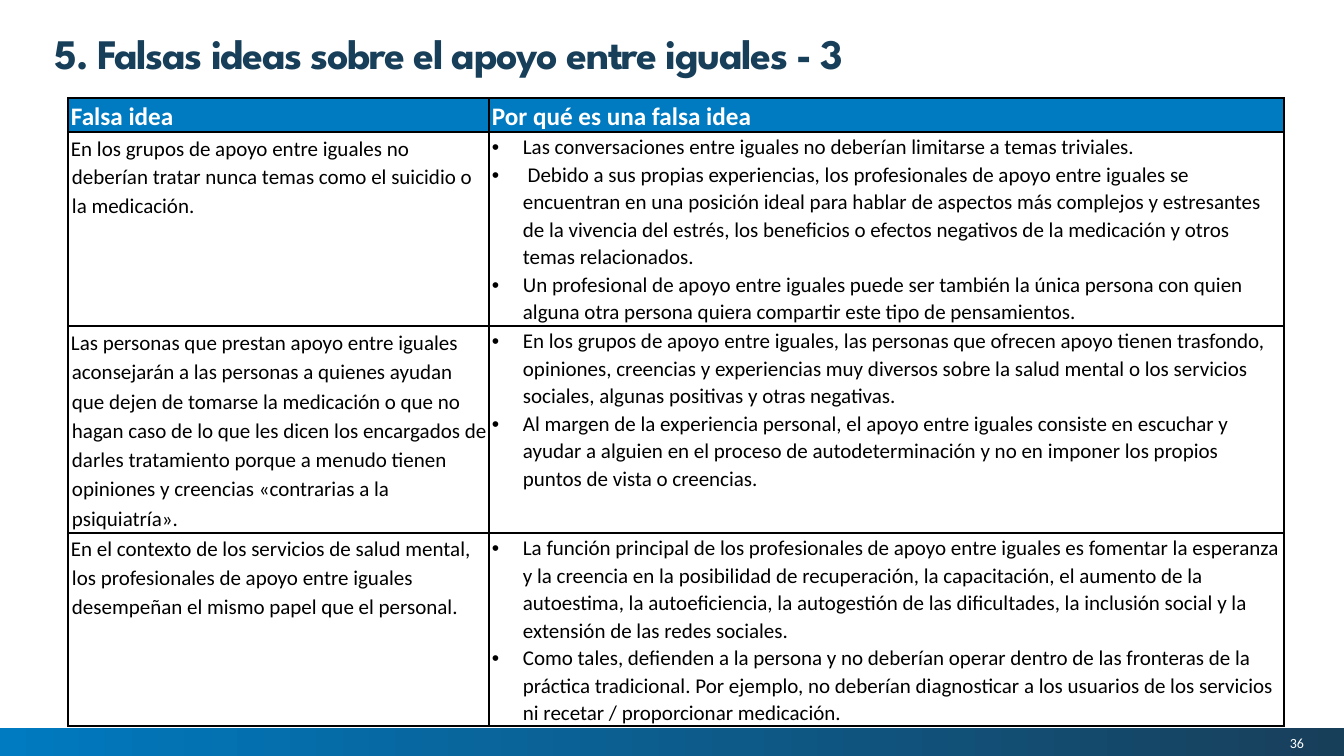
from lxml.etree import SubElement
from pptx import Presentation
from pptx.dml.color import RGBColor
from pptx.enum.shapes import MSO_SHAPE
from pptx.enum.text import MSO_ANCHOR, PP_ALIGN
from pptx.oxml.ns import qn
from pptx.util import Inches, Pt

BLUE = RGBColor(0x00, 0x7A, 0xC0)
NAVY = RGBColor(0x18, 0x3F, 0x5A)
WHITE = RGBColor(0xFF, 0xFF, 0xFF)
BLACK = RGBColor(0x00, 0x00, 0x00)

SLIDE_WIDTH, SLIDE_HEIGHT = 1344, 756
PX_PER_INCH = 100.8

TITLE_FORMAT = {"name": "League Spartan", "size": Pt(30), "bold": True}
NUMBER_FORMAT = {"name": "Calibri", "size": Pt(10), "bold": False}
HEADER_FORMAT = {"name": "Calibri", "size": Pt(18), "bold": True}
BODY_FORMAT = {"name": "Calibri", "size": Pt(15), "bold": False}

COLUMN_WIDTHS = (421, 795)
ROW_HEIGHTS = (34, 194, 207, 193)
HEADINGS = ("Falsa idea", "Por qué es una falsa idea")
FALSE_IDEAS = [
    (
        "En los grupos de apoyo entre iguales no deberían tratar nunca temas como el suicidio o la medicación.",
        [
            "Las conversaciones entre iguales no deberían limitarse a temas triviales.",
            " Debido a sus propias experiencias, los profesionales de apoyo entre iguales se encuentran en una "
            "posición ideal para hablar de aspectos más complejos y estresantes de la vivencia del estrés, los "
            "beneficios o efectos negativos de la medicación y otros temas relacionados.",
            "Un profesional de apoyo entre iguales puede ser también la única persona con quien alguna otra "
            "persona quiera compartir este tipo de pensamientos.",
        ],
        1.12,
    ),
    (
        "Las personas que prestan apoyo entre iguales aconsejarán a las personas a quienes ayudan que dejen de "
        "tomarse la medicación o que no hagan caso de lo que les dicen los encargados de darles tratamiento "
        "porque a menudo tienen opiniones y creencias «contrarias a la psiquiatría».",
        [
            "En los grupos de apoyo entre iguales, las personas que ofrecen apoyo tienen trasfondo, opiniones, "
            "creencias y experiencias muy diversos sobre la salud mental o los servicios sociales, algunas "
            "positivas y otras negativas.",
            "Al margen de la experiencia personal, el apoyo entre iguales consiste en escuchar y ayudar a alguien "
            "en el proceso de autodeterminación y no en imponer los propios puntos de vista o creencias.",
        ],
        1.14,
    ),
    (
        "En el contexto de los servicios de salud mental, los profesionales de apoyo entre iguales desempeñan "
        "el mismo papel que el personal.",
        [
            "La función principal de los profesionales de apoyo entre iguales es fomentar la esperanza y la "
            "creencia en la posibilidad de recuperación, la capacitación, el aumento de la autoestima, la "
            "autoeficiencia, la autogestión de las dificultades, la inclusión social y la extensión de las "
            "redes sociales.",
            "Como tales, defienden a la persona y no deberían operar dentro de las fronteras de la práctica "
            "tradicional. Por ejemplo, no deberían diagnosticar a los usuarios de los servicios ni recetar / "
            "proporcionar medicación.",
        ],
        1.12,
    ),
]


def px(length):
    return round(length * Inches(1) / PX_PER_INCH)


def add_run(paragraph, text, text_format, color):
    run = paragraph.add_run()
    run.text = text
    for attribute, value in text_format.items():
        setattr(run.font, attribute, value)
    run.font.color.rgb = color
    return run


def set_margins(holder, left, top, right, bottom):
    margins = {"left": left, "top": top, "right": right, "bottom": bottom}
    for side, length in margins.items():
        setattr(holder, f"margin_{side}", px(length))


def add_title(slide, left, top, width, height):
    frame = slide.shapes.add_textbox(px(left), px(top), px(width), px(height)).text_frame
    frame.word_wrap = True
    paragraph = frame.paragraphs[0]
    paragraph.line_spacing = Pt(33)
    title = add_run(paragraph, "5. Falsas ideas sobre el apoyo entre iguales - 3", TITLE_FORMAT, NAVY)
    title.font._element.set("spc", "-100")


def add_footer(slide, left, top, width, height):
    band = slide.shapes.add_shape(MSO_SHAPE.RECTANGLE, px(left), px(top), px(width), px(height))
    band.shadow.inherit = False
    band.line.fill.background()
    band.fill.gradient()
    band.fill.gradient_angle = 0
    for stop, position, color in zip(band.fill.gradient_stops, (0, 1), (BLUE, NAVY)):
        stop.position = position
        stop.color.rgb = color

    number_width, right_gap = 181, 40
    number_left = left + width - right_gap - number_width
    frame = slide.shapes.add_textbox(px(number_left), px(top + 3), px(number_width), px(height - 4)).text_frame
    set_margins(frame, 0, 0, 0, 0)
    frame.word_wrap = True
    frame.vertical_anchor = MSO_ANCHOR.MIDDLE
    frame.paragraphs[0].alignment = PP_ALIGN.RIGHT
    add_run(frame.paragraphs[0], "36", NUMBER_FORMAT, WHITE)


def add_borders(cell):
    properties = cell._tc.get_or_add_tcPr()
    for side in ("lnL", "lnR", "lnT", "lnB"):
        border = SubElement(properties, qn(f"a:{side}"), w=str(Pt(1)))
        fill = SubElement(border, qn("a:solidFill"))
        SubElement(fill, qn("a:srgbClr"), val=str(BLACK))


def fill_cell(cell, texts, text_format, color, line_spacing=1.07, bulleted=False):
    set_margins(cell, 3, 1, 2, 0)
    add_borders(cell)
    indent = px(31 if bulleted else 1)
    for index, text in enumerate(texts):
        paragraph = cell.text_frame.add_paragraph() if index else cell.text_frame.paragraphs[0]
        properties = paragraph._p.get_or_add_pPr()
        properties.set("marL", str(indent))
        properties.set("indent", str(-indent))
        if bulleted:
            SubElement(properties, qn("a:buFont"), typeface="Arial")
            SubElement(properties, qn("a:buChar"), char="•")
        paragraph.line_spacing = line_spacing
        add_run(paragraph, text, text_format, color)


def add_ideas_table(slide, left, top):
    frame = slide.shapes.add_table(
        len(ROW_HEIGHTS), len(COLUMN_WIDTHS),
        px(left), px(top), px(sum(COLUMN_WIDTHS)), px(sum(ROW_HEIGHTS)),
    )
    table = frame.table
    table.horz_banding = False
    for column, width in zip(table.columns, COLUMN_WIDTHS):
        column.width = px(width)
    for row, height in zip(table.rows, ROW_HEIGHTS):
        row.height = px(height)

    for column, heading in enumerate(HEADINGS):
        cell = table.cell(0, column)
        fill_cell(cell, [heading], HEADER_FORMAT, WHITE)
        cell.fill.solid()
        cell.fill.fore_color.rgb = BLUE

    for row, (idea, reasons, idea_spacing) in enumerate(FALSE_IDEAS, start=1):
        fill_cell(table.cell(row, 0), [idea], BODY_FORMAT, BLACK, idea_spacing)
        fill_cell(table.cell(row, 1), reasons, BODY_FORMAT, BLACK, bulleted=True)
        for cell in table.rows[row].cells:
            cell.fill.background()


def main():
    presentation = Presentation()
    presentation.slide_width = px(SLIDE_WIDTH)
    presentation.slide_height = px(SLIDE_HEIGHT)
    slide = presentation.slides.add_slide(presentation.slide_layouts[6])
    add_footer(slide, 0, 728, SLIDE_WIDTH, 28)
    add_title(slide, 45, 27, 1080, 47)
    add_ideas_table(slide, 68, 98)
    presentation.save("out.pptx")


if __name__ == "__main__":
    main()
